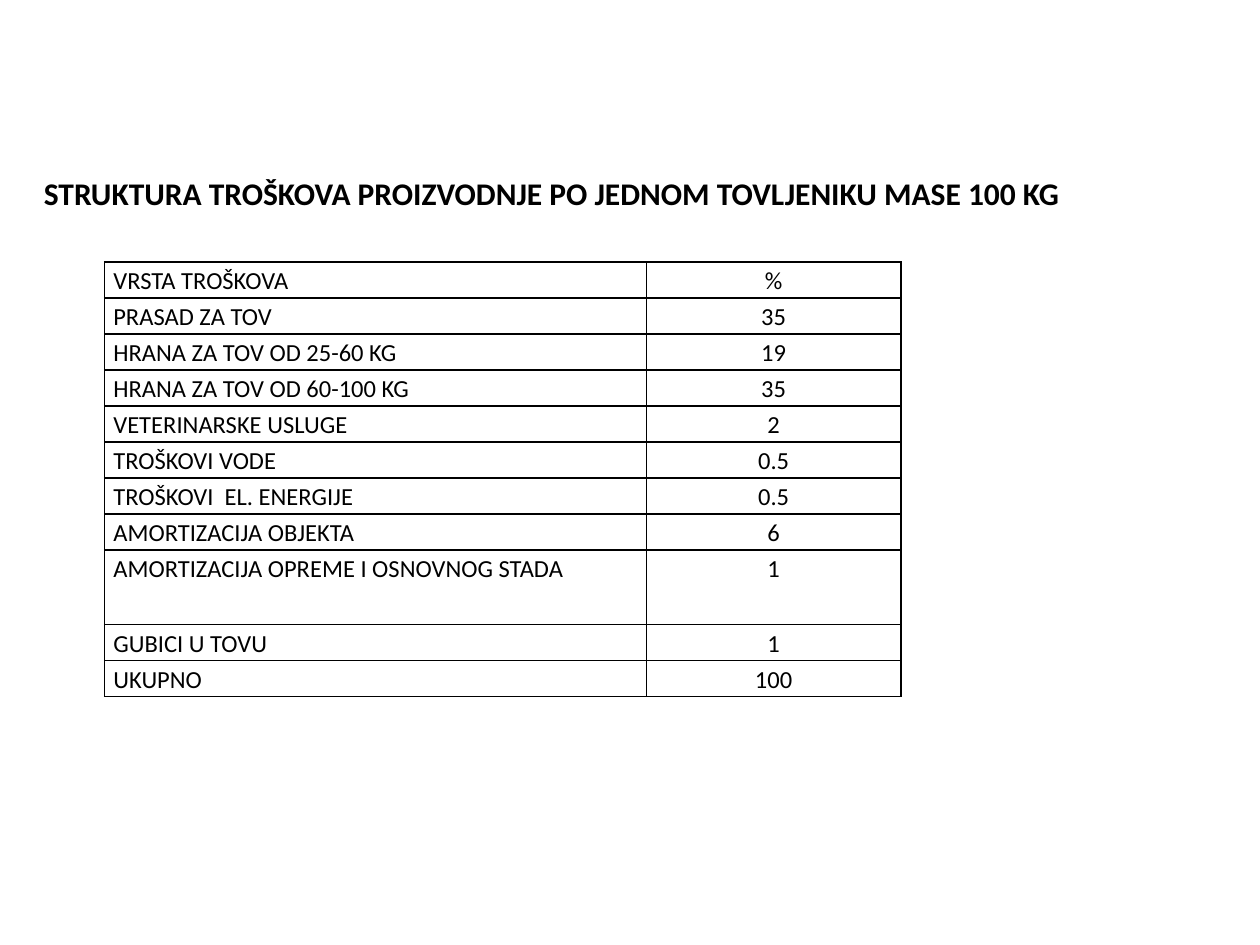
from pptx import Presentation
from pptx.dml.color import RGBColor
from pptx.enum.text import MSO_ANCHOR as Anchor, PP_ALIGN as Align
from pptx.oxml import parse_xml
from pptx.oxml.ns import nsdecls
from pptx.util import Inches, Pt


def color(value):
    return RGBColor.from_string(value)


def write(frame, text, size=14, bold=False, align=Align.LEFT, spacing=1.0):
    para = frame.paragraphs[0]
    para.alignment = align
    para.line_spacing = spacing
    span = para.add_run()
    span.text = text
    span.font.name = "Calibri"
    span.font.size = Pt(size)
    span.font.bold = bold
    span.font.color.rgb = color("000000")


deck = Presentation()
deck.slide_width = Inches(10)
deck.slide_height = Inches(7.5)
page = deck.slides.add_slide(deck.slide_layouts[6])

costs = [
    ("VRSTA TROŠKOVA", "%"),
    ("PRASAD ZA TOV", "35"),
    ("HRANA ZA TOV OD 25-60 KG", "19"),
    ("HRANA ZA TOV OD 60-100 KG", "35"),
    ("VETERINARSKE USLUGE", "2"),
    ("TROŠKOVI VODE", "0.5"),
    ("TROŠKOVI  EL. ENERGIJE", "0.5"),
    ("AMORTIZACIJA OBJEKTA", "6"),
    ("AMORTIZACIJA OPREME I OSNOVNOG STADA", "1"),
    ("GUBICI U TOVU", "1"),
    ("UKUPNO", "100"),
]
table_height = 3.45
tall_row, tall_height = 8, 0.59
row_height = (table_height - tall_height) / (len(costs) - 1)

table = page.shapes.add_table(
    len(costs), 2, Inches(0.83), Inches(2.08), Inches(6.32), Inches(table_height)
).table
table.first_row = False
table.horz_banding = False
table.columns[0].width = Inches(4.3)
table.columns[1].width = Inches(2.02)

for r, entry in enumerate(costs):
    table.rows[r].height = Inches(tall_height if r == tall_row else row_height)
    for c, text in enumerate(entry):
        cell = table.cell(r, c)
        cell.margin_left = cell.margin_right = Inches(0.07)
        cell.margin_top = cell.margin_bottom = 0
        write(cell.text_frame, text, spacing=1.15,
              align=Align.CENTER if c else Align.LEFT)
        for side in ("lnL", "lnR", "lnT", "lnB"):
            cell._tc.get_or_add_tcPr().append(parse_xml(
                f'<a:{side} {nsdecls("a")} w="{Pt(1)}"><a:solidFill>'
                f'<a:srgbClr val="000000"/></a:solidFill></a:{side}>'))
        cell.fill.background()

title = page.shapes.add_textbox(Inches(0.25), Inches(1.33), Inches(8.35), Inches(0.74))
title.text_frame.word_wrap = True
title.text_frame.vertical_anchor = Anchor.TOP
write(title.text_frame, "STRUKTURA TROŠKOVA PROIZVODNJE PO JEDNOM TOVLJENIKU MASE 100 KG",
      size=18, bold=True)

deck.save("out.pptx")
